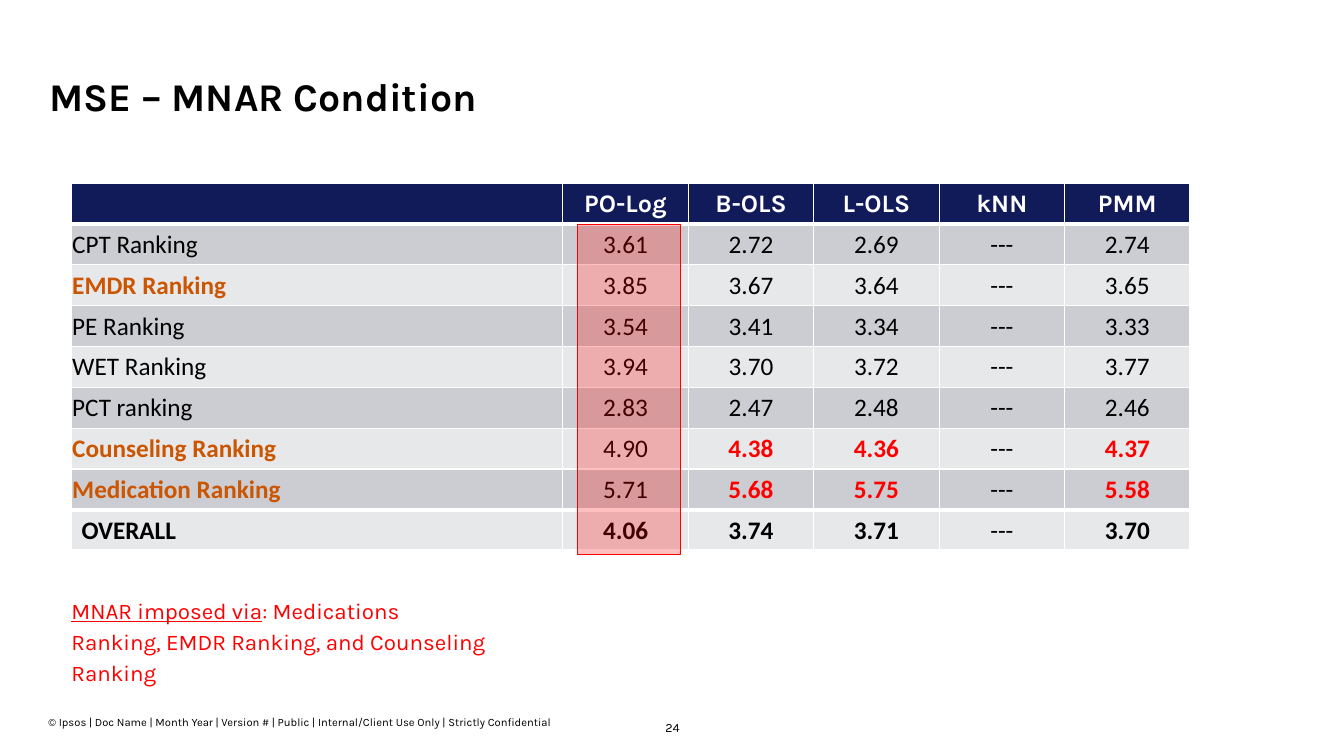
from lxml import etree
from pptx import Presentation, util as u
from pptx.dml.color import RGBColor
from pptx.enum import shapes, text
from pptx.oxml import ns

BLACK = RGBColor(0x00, 0x00, 0x00)
WHITE = RGBColor(0xFF, 0xFF, 0xFF)
RED = RGBColor(0xFF, 0x00, 0x00)
ORANGE = RGBColor(0xCB, 0x55, 0x00)
NAVY = RGBColor(0x12, 0x1B, 0x5A)
DARK_BAND = RGBColor(0xCC, 0xCD, 0xD2)
LIGHT_BAND = RGBColor(0xE7, 0xE8, 0xEA)

presentation = Presentation()
presentation.slide_width, presentation.slide_height = u.Cm(33.86), u.Cm(19.05)
slide = presentation.slides.add_slide(presentation.slide_layouts[6])


def add_text(left, top, width, height, content, size, color=BLACK, anchor=text.MSO_ANCHOR.TOP):
    """Add a text box without insets and return its paragraph."""
    box = slide.shapes.add_textbox(u.Cm(left), u.Cm(top), u.Cm(width), u.Cm(height))
    frame = box.text_frame
    frame.word_wrap = True
    frame.vertical_anchor = anchor
    frame.margin_left = frame.margin_right = frame.margin_top = frame.margin_bottom = 0
    paragraph = frame.paragraphs[0]
    paragraph.add_run().text = content
    paragraph.font.name = "Karla"
    paragraph.font.size = u.Pt(size)
    paragraph.font.color.rgb = color
    return paragraph


def add_borders(cell, top, bottom):
    """Draw white cell borders; top and bottom are widths in points."""
    properties = cell._tc.get_or_add_tcPr()
    for side, width in (("L", 1), ("R", 1), ("T", top), ("B", bottom)):
        line = etree.SubElement(properties, ns.qn(f"a:ln{side}"), w=str(u.Pt(width)))
        fill = etree.SubElement(line, ns.qn("a:solidFill"))
        etree.SubElement(fill, ns.qn("a:srgbClr"), val=str(WHITE))


# Footer and slide number
add_text(1.22, 18.03, 12.98, 0.33,
         "© Ipsos | Doc Name | Month Year | Version # | Public | "
         "Internal/Client Use Only | Strictly Confidential",
         8, anchor=text.MSO_ANCHOR.BOTTOM)
number = add_text(16.26, 18.1, 1.37, 0.38, "24", 9)
number.alignment = text.PP_ALIGN.CENTER
number.line_spacing = 1.1

# Title
title = add_text(1.24, 1.96, 31.39, 1.98, "MSE – MNAR Condition", 28)
title.font.bold = True
title.line_spacing = 0.9

# Table of errors by ranking and method
rows = [
    ("", "PO-Log", "B-OLS", "L-OLS", "kNN", "PMM"),
    ("CPT Ranking", "3.61", "2.72", "2.69", "---", "2.74"),
    ("EMDR Ranking", "3.85", "3.67", "3.64", "---", "3.65"),
    ("PE Ranking", "3.54", "3.41", "3.34", "---", "3.33"),
    ("WET Ranking", "3.94", "3.70", "3.72", "---", "3.77"),
    ("PCT ranking", "2.83", "2.47", "2.48", "---", "2.46"),
    ("Counseling Ranking", "4.90", "4.38", "4.36", "---", "4.37"),
    ("Medication Ranking", "5.71", "5.68", "5.75", "---", "5.58"),
    ("OVERALL", "4.06", "3.74", "3.71", "---", "3.70"),
]
high_error_rows = {"Counseling Ranking", "Medication Ranking"}
imposed_rows = high_error_rows | {"EMDR Ranking"}
last_row = len(rows) - 1

table = slide.shapes.add_table(len(rows), len(rows[0]), u.Cm(1.8), u.Cm(4.61),
                               u.Cm(28.18), u.Cm(9.27)).table
for column_index, column in enumerate(table.columns):
    column.width = u.Cm(3.16 if column_index else 12.38)
for row in table.rows:
    row.height = u.Cm(1.03)

for row_index, values in enumerate(rows):
    is_header, is_overall = row_index == 0, row_index == last_row
    label = values[0]
    for column_index, value in enumerate(values):
        cell = table.cell(row_index, column_index)
        add_borders(cell, 3 if is_overall else 1,
                    3 if row_index in (0, last_row - 1, last_row) else 1)
        cell.fill.solid()
        band = DARK_BAND if row_index % 2 else LIGHT_BAND
        cell.fill.fore_color.rgb = NAVY if is_header else band
        cell.vertical_anchor = text.MSO_ANCHOR.BOTTOM if is_header else text.MSO_ANCHOR.MIDDLE
        if not is_header and not (is_overall and column_index == 0):
            cell.margin_left = cell.margin_right = cell.margin_top = u.Cm(0.02)
            cell.margin_bottom = 0

        # Orange marks imposed rankings, red marks their highest errors
        color = WHITE if is_header else BLACK
        if column_index == 0 and label in imposed_rows:
            color = ORANGE
        elif column_index > 1 and label in high_error_rows and value != "---":
            color = RED
        paragraph = cell.text_frame.paragraphs[0]
        if value:
            paragraph.add_run().text = value
        if column_index:
            paragraph.alignment = text.PP_ALIGN.CENTER
        paragraph.font.name = "Karla" if is_header else "Calibri"
        paragraph.font.size = u.Pt(18)
        paragraph.font.bold = value != "---" and (is_overall or color != BLACK)
        paragraph.font.color.rgb = color

# Translucent highlight over the PO-Log column
highlight = slide.shapes.add_shape(shapes.MSO_SHAPE.RECTANGLE, u.Cm(14.55), u.Cm(5.66),
                                   u.Cm(2.59), u.Cm(8.31))
highlight.shadow.inherit = False
highlight.fill.solid()
highlight.fill.fore_color.rgb = RED
fill_color = highlight._element.spPr.find(ns.qn("a:solidFill"))[0]
etree.SubElement(fill_color, ns.qn("a:alpha"), val="25000")
highlight.line.color.rgb = RED
highlight.line.width = u.Pt(1)

# Note on the imposed condition
note = add_text(1.8, 14.95, 10.52, 1.5, "MNAR imposed via", 16, RED)
note.line_spacing = 1.15
note.space_after = u.Pt(4)
note.runs[0].font.underline = True
note.add_run().text = ": Medications Ranking, EMDR Ranking, and Counseling Ranking"

presentation.save("out.pptx")
